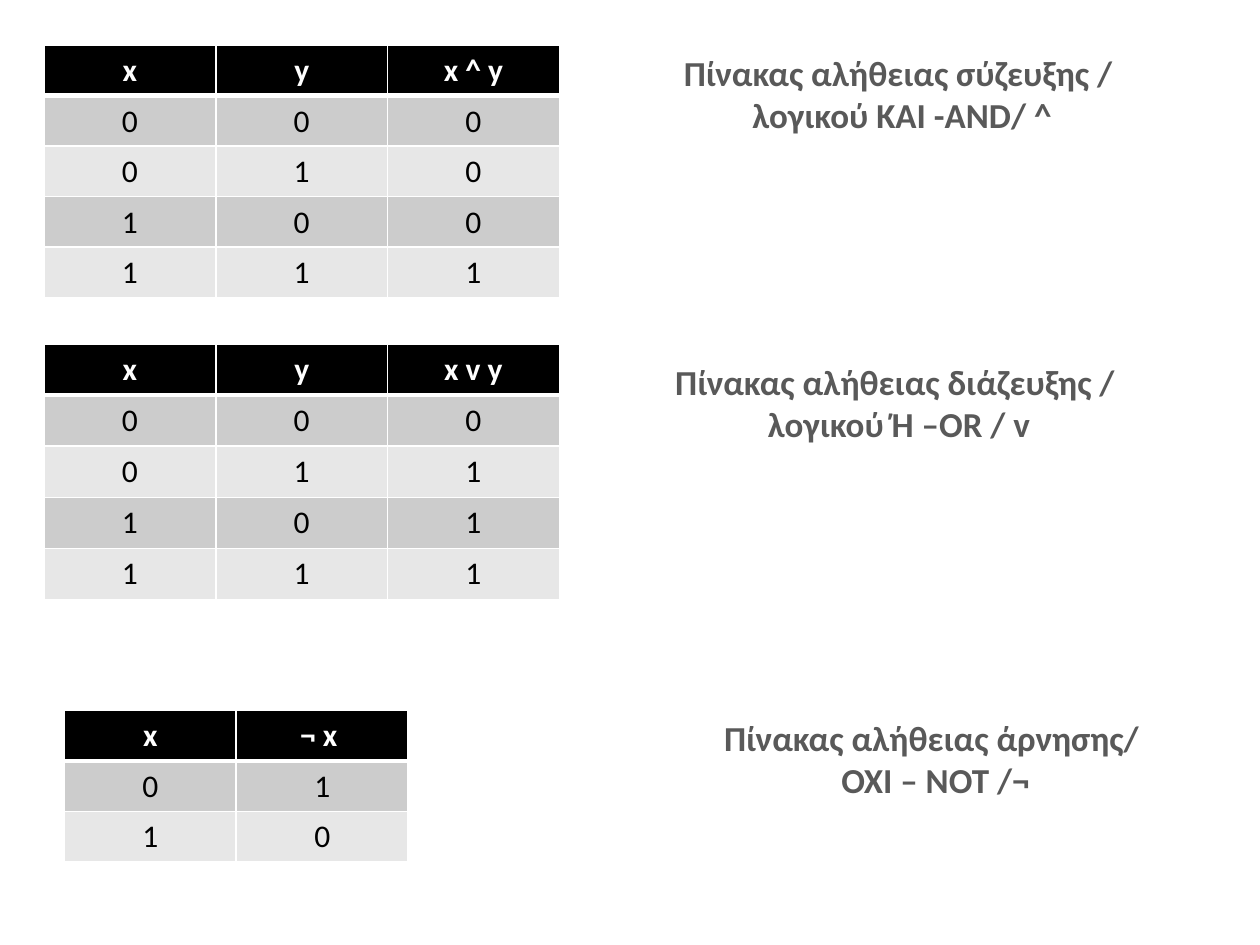
from itertools import product

from lxml import etree
from pptx import Presentation
from pptx.dml.color import RGBColor
from pptx.enum.text import MSO_AUTO_SIZE, PP_ALIGN
from pptx.oxml.ns import qn
from pptx.util import Inches, Pt

CENTER = PP_ALIGN.CENTER
GROW = MSO_AUTO_SIZE.SHAPE_TO_FIT_TEXT
COLORS = {
    "header": "000000",
    "odd_row": "CCCCCC",
    "even_row": "E7E7E7",
    "border": "FFFFFF",
    "header_text": "FFFFFF",
    "cell_text": "000000",
    "caption": "595959",
}
FORMATS = {
    "header_text": {"name": "Calibri", "size": Pt(18), "bold": True},
    "cell_text": {"name": "Calibri", "size": Pt(18), "bold": False},
    "caption": {"name": "Calibri", "size": Pt(20), "bold": True},
}
ROW_HEIGHT = 0.4
THIN, THICK = 1, 3

TRUTH_TABLES = [
    {
        "headers": ["x", "y", "x v y"],
        "operation": lambda x, y: x | y,
        "table_box": (0.35, 2.73, 4.09),
        "caption": ["Πίνακας αλήθειας διάζευξης / ", "λογικού Ή –OR / v"],
        "caption_box": (5.24, 2.81, 3.79, 0.77),
    },
    {
        "headers": ["x", "¬ x "],
        "operation": lambda x: 1 - x,
        "table_box": (0.51, 5.64, 2.73),
        "caption": ["Πίνακας αλήθειας άρνησης/ ", "OXI – ΝΟΤ /¬"],
        "caption_box": (5.63, 5.64, 3.59, 0.77),
    },
    {
        "headers": ["x", "y", "x ^ y"],
        "operation": lambda x, y: x & y,
        "table_box": (0.35, 0.36, 4.09),
        "caption": ["Πίνακας αλήθειας σύζευξης / ", "λογικού ΚΑΙ -AND/ ^"],
        "caption_box": (5.31, 0.36, 3.7, 0.77),
    },
]


class SlideBuilder:
    def __init__(self, slide, colors, formats):
        self.slide = slide
        self.colors = colors
        self.formats = formats

    def text(self, paragraph, content, style):
        paragraph.alignment = CENTER
        run = paragraph.add_run()
        run.text = content
        for attribute, value in self.formats[style].items():
            setattr(run.font, attribute, value)
        run.font.color.rgb = RGBColor.from_string(self.colors[style])

    def borders(self, cell, top, bottom):
        properties = cell._tc.get_or_add_tcPr()
        widths = {"a:lnL": THIN, "a:lnR": THIN, "a:lnT": top, "a:lnB": bottom}
        for tag, width in widths.items():
            line = etree.SubElement(properties, qn(tag), w=str(Pt(width)))
            fill = etree.SubElement(line, qn("a:solidFill"))
            etree.SubElement(fill, qn("a:srgbClr"), val=self.colors["border"])

    def table(self, rows, left, top, width):
        frame = self.slide.shapes.add_table(
            len(rows), len(rows[0]), Inches(left), Inches(top),
            Inches(width), Inches(ROW_HEIGHT * len(rows)))
        for row_index, row in enumerate(rows):
            header = row_index == 0
            band = "header" if header else "odd_row" if row_index % 2 else "even_row"
            for column_index, value in enumerate(row):
                cell = frame.table.cell(row_index, column_index)
                self.borders(cell, THICK if row_index == 1 else THIN,
                             THICK if header else THIN)
                cell.fill.solid()
                cell.fill.fore_color.rgb = RGBColor.from_string(self.colors[band])
                self.text(cell.text_frame.paragraphs[0], str(value),
                          "header_text" if header else "cell_text")

    def caption(self, lines, *box):
        shape = self.slide.shapes.add_textbox(*map(Inches, box))
        text_frame = shape.text_frame
        text_frame.word_wrap = False
        text_frame.auto_size = GROW
        for index, line in enumerate(lines):
            paragraph = text_frame.add_paragraph() if index else text_frame.paragraphs[0]
            self.text(paragraph, line, "caption")


def truth_rows(headers, operation):
    inputs = product((0, 1), repeat=len(headers) - 1)
    return [headers] + [[*values, operation(*values)] for values in inputs]


def main():
    presentation = Presentation()
    presentation.slide_width = Inches(10)
    presentation.slide_height = Inches(7.5)
    slide = presentation.slides.add_slide(presentation.slide_layouts[6])
    builder = SlideBuilder(slide, COLORS, FORMATS)
    for entry in TRUTH_TABLES:
        rows = truth_rows(entry["headers"], entry["operation"])
        builder.table(rows, *entry["table_box"])
        builder.caption(entry["caption"], *entry["caption_box"])
    presentation.save("out.pptx")


if __name__ == "__main__":
    main()
